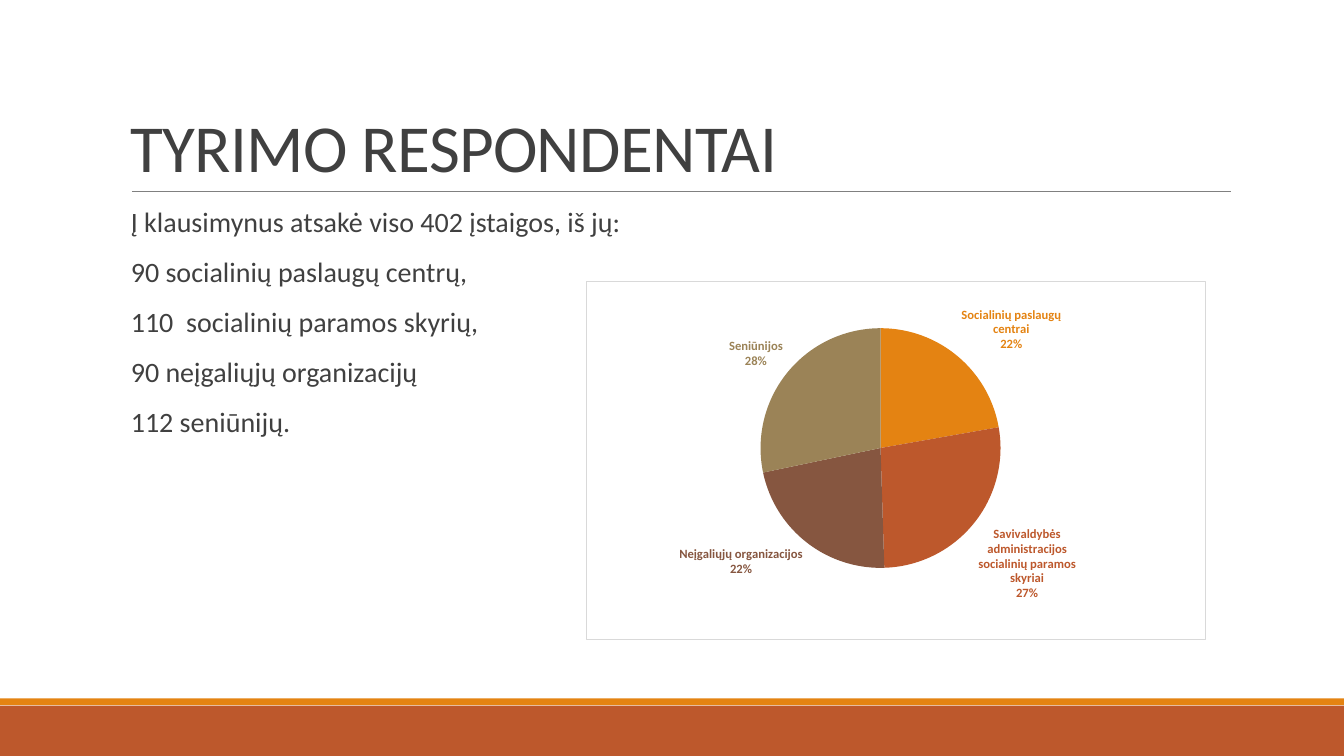
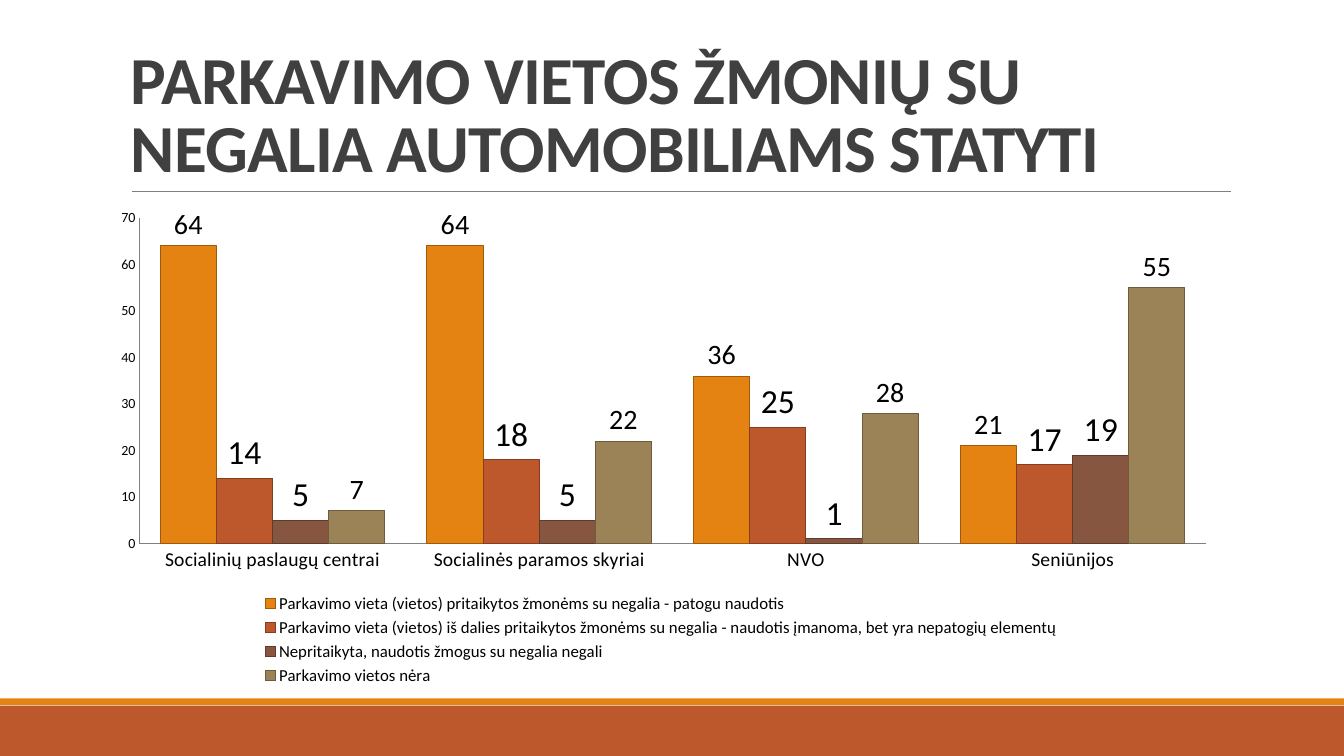
"""Build two survey slides: the respondents and the parking places."""
from lxml import etree
from pptx import Presentation
from pptx.chart.data import CategoryChartData
from pptx.dml.color import RGBColor
from pptx.enum.chart import XL_CHART_TYPE, XL_LABEL_POSITION, XL_LEGEND_POSITION, XL_TICK_MARK
from pptx.enum.shapes import MSO_CONNECTOR, MSO_SHAPE
from pptx.enum.text import MSO_ANCHOR
from pptx.oxml import parse_xml
from pptx.oxml.ns import nsdecls, qn
from pptx.util import Pt

PIE = XL_CHART_TYPE.PIE
COLUMN = XL_CHART_TYPE.COLUMN_CLUSTERED
OUTSIDE = XL_LABEL_POSITION.OUTSIDE_END
BOTTOM = XL_LEGEND_POSITION.BOTTOM
NO_TICK = XL_TICK_MARK.NONE
STRAIGHT = MSO_CONNECTOR.STRAIGHT
RECT = MSO_SHAPE.RECTANGLE
LOW = MSO_ANCHOR.BOTTOM

ORANGE = RGBColor(0xE4, 0x83, 0x12)
RUST = RGBColor(0xBD, 0x58, 0x2C)
BROWN = RGBColor(0x86, 0x56, 0x40)
SAND = RGBColor(0x9B, 0x83, 0x57)
DARK = RGBColor(0x40, 0x40, 0x40)
GREY = RGBColor(0x80, 0x80, 0x80)
BLACK = RGBColor(0, 0, 0)
HUES = [ORANGE, RUST, BROWN, SAND]
FACE = "Calibri"
WIDE, HIGH = 960, 540
LEFT, SPAN = 86.4, 792

deck = Presentation()
deck.slide_width, deck.slide_height = Pt(WIDE), Pt(HIGH)


def add_page(title, bold):
    """Add a slide with the bands, the title and its rule."""
    page = deck.slides.add_slide(deck.slide_layouts[6])
    for top, tall, hue in [(504, 36, RUST), (498.8, 4.8, ORANGE)]:
        band = page.shapes.add_shape(RECT, 0, Pt(top), Pt(WIDE), Pt(tall))
        band.shadow.inherit = False
        band.fill.solid()
        band.fill.fore_color.rgb = hue
        band.line.fill.background()
    rule = page.shapes.add_connector(STRAIGHT, Pt(94.2), Pt(136.8), Pt(879), Pt(136.8))
    rule.line.color.rgb = GREY
    rule.line.width = Pt(0.5)
    etree.SubElement(rule.element.xpath("p:spPr")[0], qn("a:effectLst"))
    box = page.shapes.add_textbox(Pt(LEFT), Pt(22.6), Pt(SPAN), Pt(114.2))
    frame = box.text_frame
    frame.word_wrap = True
    frame.vertical_anchor = LOW
    frame.text = title
    head = frame.paragraphs[0]
    head.line_spacing = 0.85
    font = head.runs[0].font
    font.name, font.size, font.bold = FACE, Pt(48), bold
    font.color.rgb = DARK
    box.element.xpath(".//a:rPr")[0].set("spc", "-50")
    return page


def add_plot(page, kind, data, place, inner):
    """Add a chart whose inner plot area is given in parts of the chart."""
    chart = page.shapes.add_chart(kind, *map(Pt, place), data).chart
    chart.has_title = False
    chart.has_legend = kind == COLUMN
    chart.font.name, chart.font.size = FACE, Pt(10)
    chart.font.color.rgb = BLACK
    chart.plots[0].vary_by_categories = kind == PIE
    area = chart.element.xpath("c:chart/c:plotArea")[0]
    for old in area.xpath("c:layout"):
        area.remove(old)
    sides = "".join(f'<c:{key} val="{part}"/>' for key, part in zip("xywh", inner))
    area.insert(0, parse_xml(
        f'<c:layout {nsdecls("c")}><c:manualLayout><c:layoutTarget val="inner"/>'
        f'<c:xMode val="edge"/><c:yMode val="edge"/>{sides}</c:manualLayout></c:layout>'))
    return chart


page = add_page("TYRIMO RESPONDENTAI", False)
lines = [
    "Į klausimynus atsakė viso 402 įstaigos, iš jų:",
    "90 socialinių paslaugų centrų,",
    "110  socialinių paramos skyrių,",
    "90 neįgaliųjų organizacijų",
    "112 seniūnijų.",
]
frame = page.shapes.add_textbox(Pt(LEFT), Pt(145.4), Pt(SPAN), Pt(316.8)).text_frame
frame.word_wrap = True
frame.text = "\n".join(lines)
for para in frame.paragraphs:
    para.line_spacing = 0.9
    para.space_before, para.space_after = Pt(12), Pt(2)
    font = para.runs[0].font
    font.name, font.size = FACE, Pt(20)
    font.color.rgb = DARK

data = CategoryChartData()
data.categories = [
    "Socialinių paslaugų centrai",
    "Savivaldybės administracijos socialinių paramos skyriai",
    "Neįgaliųjų organizacijos",
    "Seniūnijos",
]
data.add_series("Series 1", [22, 27, 22, 28])
chart = add_plot(page, PIE, data, (418.3, 200.9, 443.5, 256.3), (0.28, 0.13, 0.39, 0.67))
chart.element.xpath("c:chart")[0].addnext(parse_xml(
    f'<c:spPr {nsdecls("c", "a")}><a:solidFill><a:srgbClr val="FFFFFF"/></a:solidFill>'
    '<a:ln w="9525"><a:solidFill><a:srgbClr val="D9D9D9"/></a:solidFill></a:ln></c:spPr>'))
points = chart.plots[0].series[0].points
for num, hue in enumerate(HUES):
    slice_fill = points[num].format.fill
    slice_fill.solid()
    slice_fill.fore_color.rgb = hue
    label = points[num].data_label
    label.font.name, label.font.size, label.font.bold = FACE, Pt(9), True
    label.font.color.rgb = hue
    label.position = OUTSIDE
for label in chart.element.xpath(".//c:dLbl"):
    for key, flag in [("Val", "0"), ("CatName", "1"), ("Percent", "1")]:
        label.xpath(f"c:show{key}")[0].set("val", flag)
    etree.SubElement(label, qn("c:separator")).text = "\n"

page = add_page("PARKAVIMO VIETOS ŽMONIŲ SU NEGALIA AUTOMOBILIAMS STATYTI", True)
rows = [
    ("Parkavimo vieta (vietos) pritaikytos žmonėms su negalia - patogu naudotis",
     [64, 64, 36, 21], 20),
    ("Parkavimo vieta (vietos) iš dalies pritaikytos žmonėms su negalia - "
     "naudotis įmanoma, bet yra nepatogių elementų", [14, 18, 25, 17], 24),
    ("Nepritaikyta, naudotis žmogus su negalia negali", [5, 5, 1, 19], 24),
    ("Parkavimo vietos nėra", [7, 22, 28, 55], 20),
]
data = CategoryChartData()
data.categories = ["Socialinių paslaugų centrai", "Socialinės paramos skyriai", "NVO", "Seniūnijos"]
for name, vals, size in rows:
    data.add_series(name, vals)
chart = add_plot(page, COLUMN, data, (67, 145.4, 810.7, 347), (0.04, 0.03, 0.94, 0.67))
plot = chart.plots[0]
plot.gap_width, plot.overlap = 75, 0
for bars, hue, (name, vals, size) in zip(plot.series, HUES, rows):
    bars.format.fill.solid()
    bars.format.fill.fore_color.rgb = hue
    bars.format.line.color.rgb = RGBColor(*(int(part * 0.7) for part in hue))
    bars.format.line.width = Pt(0.75)
    labels = bars.data_labels
    labels.show_value = True
    labels.position = OUTSIDE
    labels.font.name, labels.font.size = FACE, Pt(size)
    labels.font.color.rgb = BLACK
for axis, size in [(chart.category_axis, 14), (chart.value_axis, 10)]:
    axis.has_major_gridlines = False
    axis.major_tick_mark = axis.minor_tick_mark = NO_TICK
    axis.format.line.color.rgb = GREY
    axis.tick_labels.font.size = Pt(size)
axis = chart.value_axis
axis.minimum_scale, axis.maximum_scale, axis.major_unit = 0, 70, 10
chart.legend.position = BOTTOM
chart.legend.include_in_layout = False
chart.legend.font.size = Pt(12)

deck.save("out.pptx")
